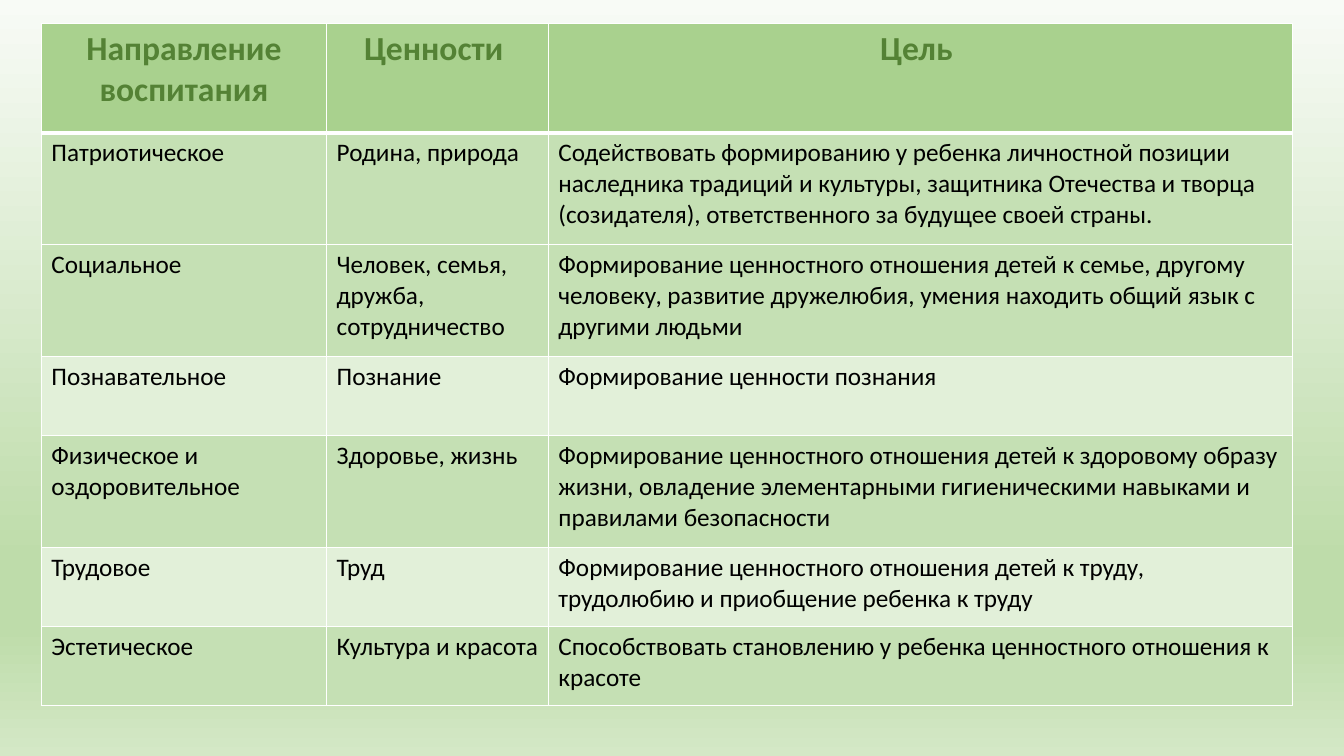
from lxml import etree
from pptx import Presentation
from pptx.dml.color import RGBColor
from pptx.enum.text import PP_ALIGN
from pptx.oxml.ns import qn
from pptx.util import Pt

CENTER, LEFT = PP_ALIGN.CENTER, PP_ALIGN.LEFT
FONT = "Calibri"
COLORS = {
    "head": "A9D18E", "title": "548235", "dark": "C5E0B4", "light": "E2F0D9",
    "text": "000000", "line": "FFFFFF",
    "pale": "F8FBF6", "green": "BEDCAA", "soft": "D4E8C6",
}
STOPS = [(0, "pale"), (74, "green"), (83, "green"), (100, "soft")]
WIDTHS = [203.8, 158.4, 531.3]
HEIGHTS = [78.2, 79.9, 79.9, 56.6, 79.9, 56.6, 56.6]
FILLS = ["head", "dark", "dark", "light", "dark", "light", "dark"]
ROWS = [
    ("Направление воспитания", "Ценности ", "Цель "),
    ("Патриотическое", "Родина, природа",
     "Содействовать формированию у ребенка личностной позиции наследника "
     "традиций и культуры, защитника Отечества и творца (созидателя), "
     "ответственного за будущее своей страны."),
    ("Социальное", "Человек, семья, дружба, сотрудничество",
     "Формирование ценностного отношения детей к семье, другому человеку, "
     "развитие дружелюбия, умения находить общий язык с другими людьми"),
    ("Познавательное", "Познание", "Формирование ценности познания"),
    ("Физическое и оздоровительное", "Здоровье, жизнь",
     "Формирование ценностного отношения детей к здоровому образу жизни, "
     "овладение элементарными гигиеническими навыками и правилами безопасности"),
    ("Трудовое", "Труд",
     "Формирование ценностного отношения детей к труду, трудолюбию "
     "и приобщение ребенка к труду"),
    ("Эстетическое", "Культура и красота",
     "Способствовать становлению у ребенка ценностного отношения к красоте"),
]


def add_color(parent, name):
    etree.SubElement(parent, qn("a:srgbClr"), val=COLORS[name])


def set_edge(cell, side, width):
    edge = etree.SubElement(cell._tc.get_or_add_tcPr(), qn(f"a:ln{side}"),
                            w=str(Pt(width)))
    add_color(etree.SubElement(edge, qn("a:solidFill")), "line")


deck = Presentation()
deck.slide_width, deck.slide_height = Pt(960), Pt(540)
slide = deck.slides.add_slide(deck.slide_layouts[6])

# Background gradient, top to bottom
back = slide.background.fill
back.gradient()
back.gradient_angle = 270
stops = next(slide._element.iter(qn("a:gsLst")))
for stop in list(stops):
    stops.remove(stop)
for place, name in STOPS:
    add_color(etree.SubElement(stops, qn("a:gs"), pos=str(place * 1000)), name)

# Table grid
table = slide.shapes.add_table(len(ROWS), len(WIDTHS), Pt(29.5), Pt(16.6),
                               Pt(sum(WIDTHS)), Pt(sum(HEIGHTS))).table
for col, width in zip(table.columns, WIDTHS):
    col.width = Pt(width)
for row, height in zip(table.rows, HEIGHTS):
    row.height = Pt(height)

# Cells: edges come before the fill
for r, texts in enumerate(ROWS):
    head = r == 0
    for c, text in enumerate(texts):
        cell = table.cell(r, c)
        for side in "LRTB":
            thick = (head and side == "B") or (r == 1 and side == "T")
            set_edge(cell, side, 3 if thick else 1)
        cell.fill.solid()
        cell.fill.fore_color.rgb = RGBColor.from_string(COLORS[FILLS[r]])
        para = cell.text_frame.paragraphs[0]
        para.alignment = CENTER if head else LEFT
        run = para.add_run()
        run.text = text
        font = run.font
        font.name, font.size, font.bold = FONT, Pt(24 if head else 18), head
        font.color.rgb = RGBColor.from_string(COLORS["title" if head else "text"])

deck.save("out.pptx")
